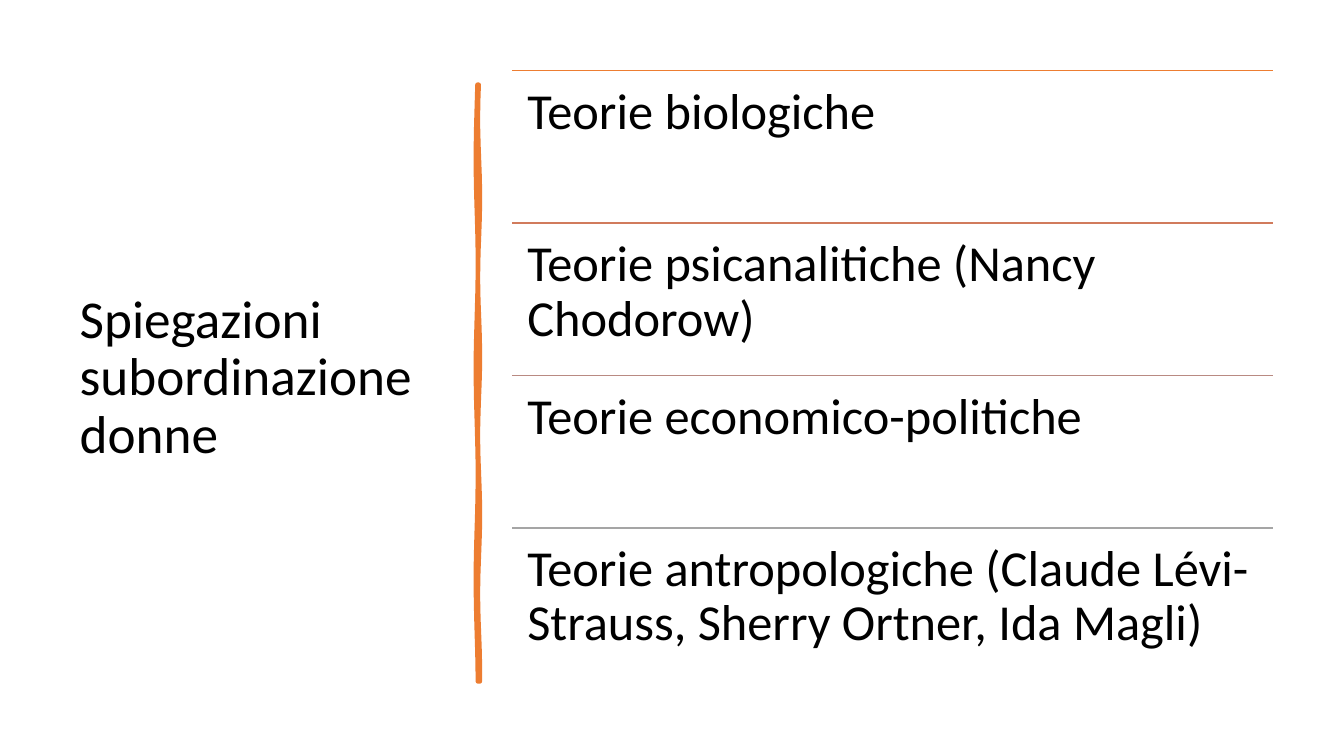
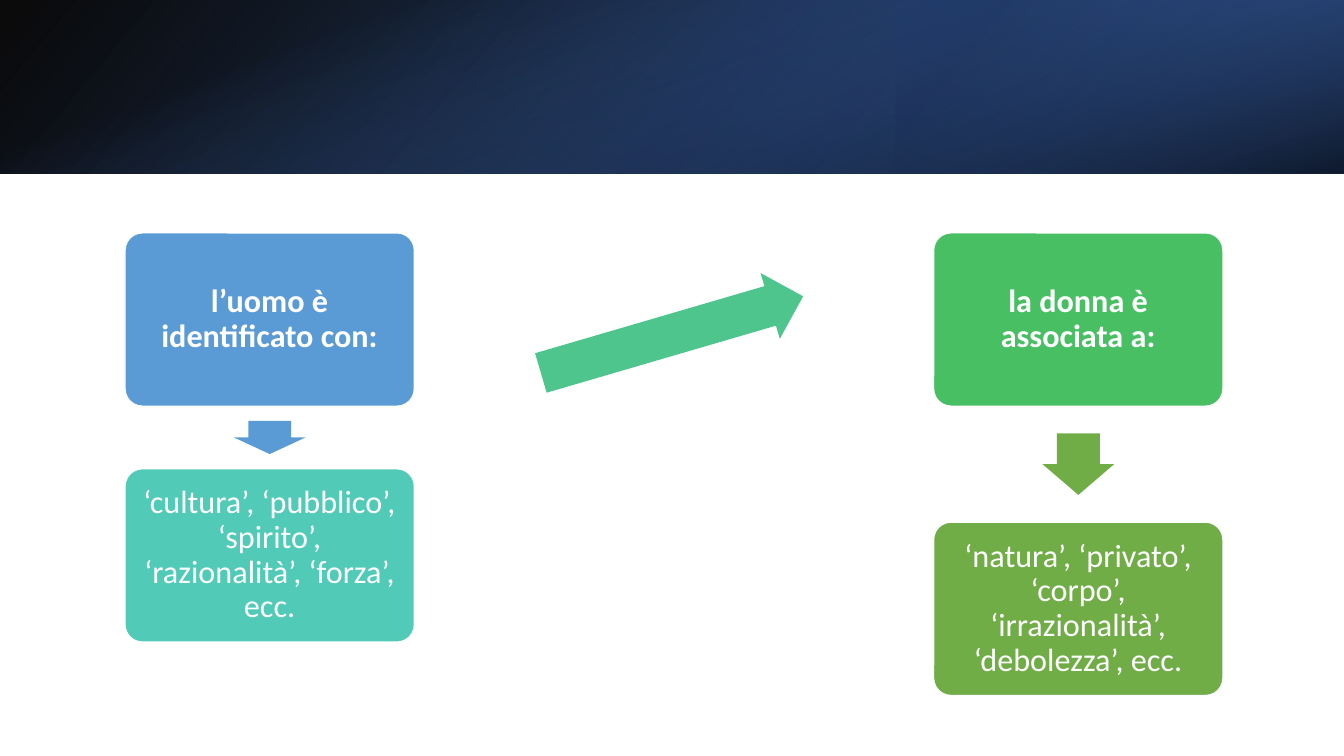
"""Build two slides on explanations of the subordination of women."""
from math import sin

from pptx import Presentation
from pptx.dml.color import RGBColor
from pptx.enum import shapes as kinds, text as txt
from pptx.oxml import ns, xmlchemy as xml
from pptx.util import Inches, Pt

FONT = "Calibri"
BLACK, WHITE, ORANGE = "000000", "FFFFFF", "ED7D31"
BLUE, TEAL, MINT, GREEN, OLIVE = "5B9BD5", "52CAB8", "4DC58D", "49BF64", "70AD47"
NAVY, COBALT, ROYAL = "203864", "2F5597", "4472C4"
KIND = kinds.MSO_SHAPE
LEFT, CENTER = txt.PP_ALIGN.LEFT, txt.PP_ALIGN.CENTER
TOP, MIDDLE = txt.MSO_ANCHOR.TOP, txt.MSO_ANCHOR.MIDDLE


def rgb(color):
    return RGBColor.from_string(color)


def write(frame, words, size, color, inset, align, anchor, bold=False):
    frame.text = words
    frame.word_wrap = True
    frame.auto_size = txt.MSO_AUTO_SIZE.NONE
    frame.vertical_anchor = anchor
    frame.margin_left = frame.margin_right = Inches(inset)
    frame.margin_top = frame.margin_bottom = Inches(inset)
    para = frame.paragraphs[0]
    para.alignment = align
    para.line_spacing = 0.9
    font = para.runs[0].font
    font.name, font.size, font.bold = FONT, Pt(size), bold
    font.color.rgb = rgb(color)


deck = Presentation()
deck.slide_width, deck.slide_height = Inches(13.33), Inches(7.5)

slide = deck.slides.add_slide(deck.slide_layouts[5])
title = slide.shapes.title
title.left, title.top = Inches(0.69), Inches(0.7)
title.width, title.height = Inches(3.74), Inches(6.11)
write(title.text_frame, "Spiegazioni subordinazione donne", 38, BLACK, 0.1, LEFT, MIDDLE)

bar_x, bar_top, bar_tall = 4.74, 0.84, 5.92
half, sway, parts = 0.01, 0.01, 40
levels = [bar_top + bar_tall * part / parts for part in range(parts + 1)]
down = [(bar_x + half + sway * sin(4 * y), y) for y in levels]
back = [(bar_x - half + sway * sin(3 * y), y) for y in reversed(levels)]
edge = [(Inches(x), Inches(y)) for x, y in down + back]
pen = slide.shapes.build_freeform(*edge[0])
pen.add_line_segments(edge[1:], close=True)
bar = pen.convert_to_shape()
bar.shadow.inherit = False
bar.fill.solid()
bar.fill.fore_color.rgb = rgb(ORANGE)
bar.line.color.rgb = rgb(ORANGE)
bar.line.width = Pt(3.25)

theories = [
    ("Teorie biologiche", ORANGE),
    ("Teorie psicanalitiche (Nancy Chodorow)", "D17B5C"),
    ("Teorie economico-politiche", "B98A82"),
    ("Teorie antropologiche (Claude Lévi-Strauss, Sherry Ortner, Ida Magli)", "A5A5A5"),
]
list_x, list_top, list_wide = Inches(5.08), Inches(0.7), Inches(7.55)
row_tall = Inches(6.05) // len(theories)
for row, (words, color) in enumerate(theories):
    y = list_top + row * row_tall
    rule = slide.shapes.add_connector(
        kinds.MSO_CONNECTOR.STRAIGHT, list_x, y, list_x + list_wide, y)
    rule.line.color.rgb = rgb(color)
    rule.line.width = Pt(1)
    rule._element.spPr.append(xml.OxmlElement("a:effectLst"))
    box = slide.shapes.add_textbox(list_x, y, list_wide, row_tall)
    write(box.text_frame, words, 36, BLACK, 0.15, LEFT, TOP)

slide = deck.slides.add_slide(deck.slide_layouts[6])

page_wide, band_tall = 13.33, 1.72
third = page_wide / 3
middle = (page_wide - band_tall) / 2
base = (0, 0, page_wide, band_tall)
corner = (page_wide - third, 0, third, band_tall)
upright = (middle, -middle, band_tall, page_wide)
bands = [
    (base, 0, True, 140, [(0, BLACK, 96), (100, COBALT, 100)]),
    (corner, 180, True, 320, [(19, NAVY, 68), (100, ROYAL, 79)]),
    (upright, 90, False, 340, [(23, ROYAL, 0), (99, BLACK, 74)]),
]
for place, turn, flip, angle, stops in bands:
    band = slide.shapes.add_shape(KIND.RECTANGLE, *map(Inches, place))
    band.shadow.inherit = False
    band.rotation = turn
    if flip:
        band._element.spPr.find(ns.qn("a:xfrm")).set("flipH", "1")
    band.line.fill.background()
    band.fill.gradient()
    band.fill.gradient_angle = 360 - angle
    for stop, (spot, color, opaque) in zip(band.fill.gradient_stops, stops):
        stop.position = spot / 100
        stop.color.rgb = rgb(color)
        alpha = xml.OxmlElement("a:alpha")
        alpha.set("val", str(opaque * 1000))
        stop._gs.find(ns.qn("a:srgbClr")).append(alpha)

card_wide, card_tall, head_y = 2.87, 1.72, 2.31
columns = [
    (1.24, 4.65, BLUE, BLUE, TEAL, "l’uomo è identificato con:",
     "‘cultura’, ‘pubblico’, ‘spirito’, ‘razionalità’, ‘forza’, ecc."),
    (9.26, 5.18, GREEN, OLIVE, OLIVE, "la donna è associata a:",
     "‘natura’, ‘privato’, ‘corpo’, ‘irrazionalità’, ‘debolezza’, ecc."),
]
arrows = [((5.31, 2.98, 2.71, 0.68), 343.7, MINT)]
for x, list_y, head_color, arrow_color, list_color, head, traits in columns:
    cards = [(head_y, head_color, head, True), (list_y, list_color, traits, False)]
    for y, color, words, bold in cards:
        card = slide.shapes.add_shape(
            KIND.ROUNDED_RECTANGLE, Inches(x), Inches(y), Inches(card_wide), Inches(card_tall))
        card.shadow.inherit = False
        card.adjustments[0] = 0.1
        card.fill.solid()
        card.fill.fore_color.rgb = rgb(color)
        card.line.color.rgb = rgb(WHITE)
        card.line.width = Pt(1)
        write(card.text_frame, words, 23, WHITE, 0.13, CENTER, MIDDLE, bold)
    head_end = head_y + card_tall
    long, thick = 0.53 * (list_y - head_end), 0.71
    mid_x, mid_y = x + card_wide / 2, (head_end + list_y) / 2
    arrows.append(((mid_x - long / 2, mid_y - thick / 2, long, thick), 90, arrow_color))

for place, turn, color in arrows:
    arrow = slide.shapes.add_shape(KIND.RIGHT_ARROW, *map(Inches, place))
    arrow.shadow.inherit = False
    arrow.rotation = turn
    arrow.adjustments[0], arrow.adjustments[1] = 0.6, 0.5
    arrow.fill.solid()
    arrow.fill.fore_color.rgb = rgb(color)
    arrow.line.fill.background()

deck.save("out.pptx")
